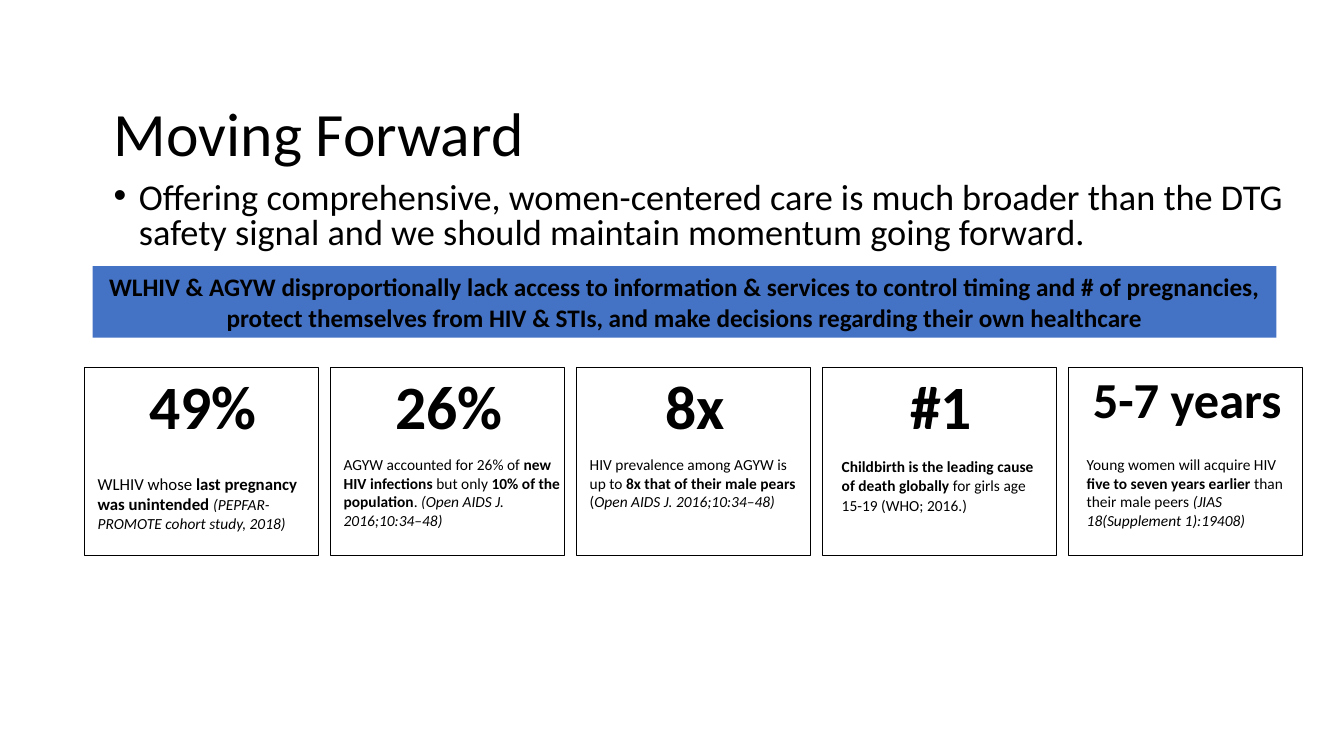
"""Build the "Moving Forward" slide with five statistic cards."""
from dataclasses import dataclass

from lxml import etree
from pptx import Presentation
from pptx.dml.color import RGBColor
from pptx.enum.shapes import MSO_SHAPE
from pptx.enum.text import MSO_ANCHOR, PP_ALIGN
from pptx.oxml.ns import qn
from pptx.util import Inches, Pt

RECT = MSO_SHAPE.RECTANGLE
LEFT, CENTER = PP_ALIGN.LEFT, PP_ALIGN.CENTER
MIDDLE = MSO_ANCHOR.MIDDLE


@dataclass(frozen=True)
class Theme:
    font: str = "Calibri"
    ink: RGBColor = RGBColor(0x00, 0x00, 0x00)
    banner: RGBColor = RGBColor(0x44, 0x72, 0xC4)
    title: float = 44
    body: float = 25.9
    banner_text: float = 18
    number: float = 44
    long_number: float = 36
    note: float = 11
    large_note: float = 12
    outline: float = 0.75


@dataclass(frozen=True)
class Span:
    text: str
    size: float
    bold: bool = False
    italic: bool = False


@dataclass(frozen=True)
class Card:
    number: Span
    note: tuple[Span, ...]
    note_top: float = 4.47
    note_inset: float = 0.03
    note_width: float = 2.35
    note_spacing: float = 1.0


THEME = Theme()
NOTE = THEME.note
CARD_LEFT, CARD_TOP, CARD_PITCH = 0.84, 3.65, 2.44
CARD_WIDTH, CARD_HEIGHT = 2.32, 1.86
NUMBER_INSET, NUMBER_TOP, NUMBER_WIDTH, NUMBER_HEIGHT = 0.08, 3.6, 2.19, 0.84
NOTE_HEIGHT = 0.9

TITLE = Span("Moving Forward", THEME.title)
BODY = Span(
    "Offering comprehensive, women-centered care is much broader than the DTG "
    "safety signal and we should maintain momentum going forward.",
    THEME.body,
)
BANNER = Span(
    "WLHIV & AGYW disproportionally lack access to information & services to "
    "control timing and # of pregnancies, protect themselves from HIV & STIs, "
    "and make decisions regarding their own healthcare",
    THEME.banner_text,
    bold=True,
)
CARDS = (
    Card(
        Span("49%", THEME.number, bold=True),
        (
            Span("WLHIV whose", THEME.large_note),
            Span(" last pregnancy was unintended ", THEME.large_note, bold=True),
            Span("(PEPFAR-PROMOTE cohort study, 2018)", NOTE, italic=True),
        ),
        note_top=4.65,
    ),
    Card(
        Span("26%", THEME.number, bold=True),
        (
            Span("AGYW accounted for 26% of ", NOTE),
            Span("new HIV infections ", NOTE, bold=True),
            Span("but only ", NOTE),
            Span("10% of the population", NOTE, bold=True),
            Span(". ", NOTE),
            Span("(Open AIDS J. 2016;10:34–48)", NOTE, italic=True),
        ),
    ),
    Card(
        Span("8x", THEME.number, bold=True),
        (
            Span("HIV prevalence among AGYW is up to ", NOTE),
            Span("8x that of their male pears", NOTE, bold=True),
            Span(" (", NOTE),
            Span("Open AIDS J. 2016;10:34–48)", NOTE, italic=True),
        ),
    ),
    Card(
        Span("#1", THEME.number, bold=True),
        (
            Span("Childbirth is the leading cause of death globally", NOTE, bold=True),
            Span(" for girls age 15-19 (WHO; 2016.)", NOTE),
        ),
        note_inset=0.09,
        note_width=2.19,
        note_spacing=1.07,
    ),
    Card(
        Span("5-7 years", THEME.long_number, bold=True),
        (
            Span("Young women will acquire HIV ", NOTE),
            Span("five to seven years earlier ", NOTE, bold=True),
            Span("than their male peers ", NOTE),
            Span("(JIAS 18(Supplement 1):19408)", NOTE, italic=True),
        ),
        note_inset=0.08,
        note_width=2.19,
    ),
)


def write(tf, spans: tuple[Span, ...], align=LEFT, spacing: float = 1.0) -> None:
    """Write styled spans into the first paragraph of a text frame."""
    tf.word_wrap = True
    p = tf.paragraphs[0]
    p.alignment = align
    p.line_spacing = spacing
    for span in spans:
        r = p.add_run()
        r.text = span.text
        r.font.name = THEME.font
        r.font.size = Pt(span.size)
        r.font.bold = span.bold
        r.font.italic = span.italic
        r.font.color.rgb = THEME.ink


def add_title(s) -> None:
    """Place and format the title placeholder."""
    sp = s.shapes.title
    sp.left, sp.top = Inches(1.03), Inches(0.53)
    sp.width, sp.height = Inches(10.63), Inches(1.64)
    sp.text_frame.vertical_anchor = MIDDLE
    write(sp.text_frame, (TITLE,), spacing=0.9)


def add_body(s) -> None:
    """Add the bulleted statement."""
    sp = s.shapes.add_textbox(Inches(1.03), Inches(1.76), Inches(11.94), Inches(0.83))
    pPr = sp.text_frame.paragraphs[0]._p.get_or_add_pPr()
    pPr.set("marL", str(Inches(0.25)))
    pPr.set("indent", str(Inches(-0.25)))
    etree.SubElement(pPr, qn("a:buFont")).set("typeface", "Arial")
    etree.SubElement(pPr, qn("a:buChar")).set("char", "•")
    write(sp.text_frame, (BODY,), spacing=0.8)


def add_banner(s) -> None:
    """Add the filled banner."""
    sp = s.shapes.add_shape(RECT, Inches(0.92), Inches(2.64), Inches(11.74), Inches(0.71))
    sp.shadow.inherit = False
    sp.fill.solid()
    sp.fill.fore_color.rgb = THEME.banner
    sp.line.fill.background()
    write(sp.text_frame, (BANNER,), CENTER)


def add_card(s, card: Card, left: float) -> None:
    """Add a grouped card with a number, a note and an outline."""
    shapes = s.shapes.add_group_shape().shapes
    number = shapes.add_textbox(
        Inches(left + NUMBER_INSET), Inches(NUMBER_TOP), Inches(NUMBER_WIDTH), Inches(NUMBER_HEIGHT)
    )
    write(number.text_frame, (card.number,), CENTER)
    note = shapes.add_textbox(
        Inches(left + card.note_inset), Inches(card.note_top), Inches(card.note_width), Inches(NOTE_HEIGHT)
    )
    write(note.text_frame, card.note, spacing=card.note_spacing)
    frame = shapes.add_shape(
        RECT, Inches(left), Inches(CARD_TOP), Inches(CARD_WIDTH), Inches(CARD_HEIGHT)
    )
    frame.shadow.inherit = False
    frame.fill.background()
    frame.line.color.rgb = THEME.ink
    frame.line.width = Pt(THEME.outline)


def main() -> None:
    """Build and save the presentation."""
    prs = Presentation()
    prs.slide_width, prs.slide_height = Inches(13.33), Inches(7.5)
    s = prs.slides.add_slide(prs.slide_layouts.get_by_name("Title Only"))
    add_title(s)
    add_body(s)
    add_banner(s)
    for i, card in enumerate(CARDS):
        add_card(s, card, CARD_LEFT + i * CARD_PITCH)
    prs.save("out.pptx")


if __name__ == "__main__":
    main()
